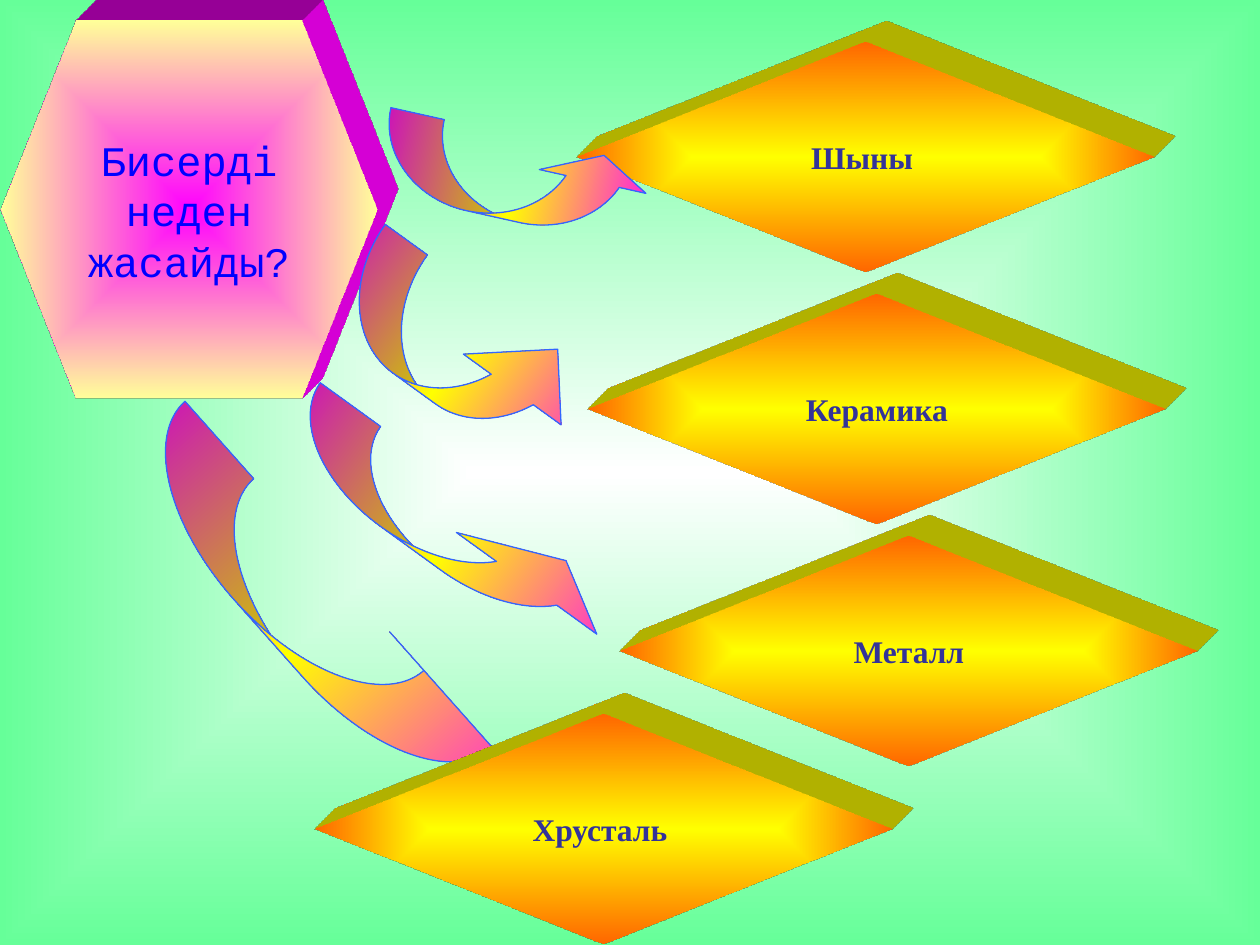
"""Build the slide on what beads are made of."""
from lxml import etree
from pptx import Presentation
from pptx import util as u
from pptx.dml.color import RGBColor
from pptx.enum import shapes, text
from pptx.oxml import parse_xml
from pptx.oxml.ns import nsdecls, qn

PX = 914400 // 126
COLORS = {
    "white": "FFFFFF", "green": "66FF99", "magenta": "FF00FF", "cream": "FFFF99",
    "yellow": "FFFF00", "orange": "FF6600", "blue": "0000FF", "navy": "333399",
    "outline": "3366FF",
}
QUESTION = "Бисерді неден жасайды?"
QUESTION_BOX = (0, 21, 378, 378)
MATERIAL_SIZE = (578, 230)
GLASS = ("Шыны ", 577, 42)
OTHER_MATERIALS = [
    (" Керамика ", 588, 294),
    (" Металл ", 620, 536),
    ("Хрусталь ", 315, 714),
]
ARROWS = [
    ((473, 42, 84, 273), 282.6, (0.65, 1.3, 0.333)),
    ((414, 335, 81, 390), 305.9, (0.921, 2.138, 0.511)),
    ((273, 368, 95, 515), 318.4, (1.089, 2.178, 0)),
]
TOP_ARROW = ((404, 215, 116, 273), 305.9, (0.448, 1.04, 0.511))


def gradient(names, direction):
    last = len(names) - 1
    stops = "".join(
        f'<a:gs pos="{100000 * i // last}"><a:srgbClr val="{COLORS[name]}"/></a:gs>'
        for i, name in enumerate(names))
    return parse_xml(f'<a:gradFill {nsdecls("a")} rotWithShape="1">'
                     f'<a:gsLst>{stops}</a:gsLst>{direction}</a:gradFill>')


def from_centre(*names):
    return gradient(names, '<a:path path="rect"><a:fillToRect l="50000" t="50000" '
                           'r="50000" b="50000"/></a:path>')


def swap_fill(holder, new_fill):
    old = holder.find(qn("a:gradFill"))
    holder.replace(old, new_fill)


def add_figure(slide, kind, box, fill):
    figure = slide.shapes.add_shape(kind, *(n * PX for n in box))
    figure.shadow.inherit = False
    figure.line.fill.background()
    figure.fill.gradient()
    swap_fill(figure._element.spPr, fill)
    return figure


def extrude(figure, color):
    properties = figure._element.spPr
    scene = parse_xml(
        f'<a:scene3d {nsdecls("a")}><a:camera prst="legacyObliqueTopRight"/>'
        '<a:lightRig rig="legacyFlat3" dir="b"/></a:scene3d>')
    depth = parse_xml(
        f'<a:sp3d {nsdecls("a")} extrusionH="430200" prstMaterial="legacyMatrix"/>')
    tint = etree.SubElement(depth, qn("a:extrusionClr"))
    etree.SubElement(tint, qn("a:srgbClr"), val=COLORS[color])
    properties.extend([scene, depth])


def write(figure, words, font, size, color, bold=False):
    frame = figure.text_frame
    frame.word_wrap = True
    frame.vertical_anchor = text.MSO_ANCHOR.MIDDLE
    frame.text = words
    paragraph = frame.paragraphs[0]
    paragraph.alignment = text.PP_ALIGN.CENTER
    style = paragraph.runs[0].font
    style.name, style.size, style.bold = font, u.Pt(size), bold
    style.color.rgb = RGBColor.from_string(COLORS[color])


def add_material(slide, words, left, top):
    diamond = add_figure(slide, shapes.MSO_SHAPE.DIAMOND, (left, top, *MATERIAL_SIZE),
                         from_centre("yellow", "orange"))
    extrude(diamond, "yellow")
    write(diamond, words, "Times New Roman", 18, "navy", True)


def add_arrow(slide, box, rotation, adjustments):
    fill = gradient(("magenta", "yellow", "magenta"), '<a:lin ang="5400000" scaled="1"/>')
    arrow = add_figure(slide, shapes.MSO_SHAPE.CURVED_RIGHT_ARROW, box, fill)
    arrow.rotation = rotation
    for i, value in enumerate(adjustments):
        arrow.adjustments[i] = value
    arrow.line.color.rgb = RGBColor.from_string(COLORS["outline"])
    arrow.line.width = u.Pt(0.75)


def main():
    deck = Presentation()
    deck.slide_width, deck.slide_height = 1260 * PX, 945 * PX
    slide = deck.slides.add_slide(deck.slide_layouts[6])
    slide.background.fill.gradient()
    swap_fill(slide._element.cSld.find(f'{qn("p:bg")}/{qn("p:bgPr")}'),
              from_centre("white", "green"))

    question = add_figure(slide, shapes.MSO_SHAPE.FLOWCHART_PREPARATION, QUESTION_BOX,
                          from_centre("magenta", "cream"))
    extrude(question, "magenta")
    write(question, QUESTION, "Courier New", 24, "blue")

    add_material(slide, *GLASS)
    for arrow in ARROWS:
        add_arrow(slide, *arrow)
    for material in OTHER_MATERIALS:
        add_material(slide, *material)
    add_arrow(slide, *TOP_ARROW)
    deck.save("out.pptx")


if __name__ == "__main__":
    main()
